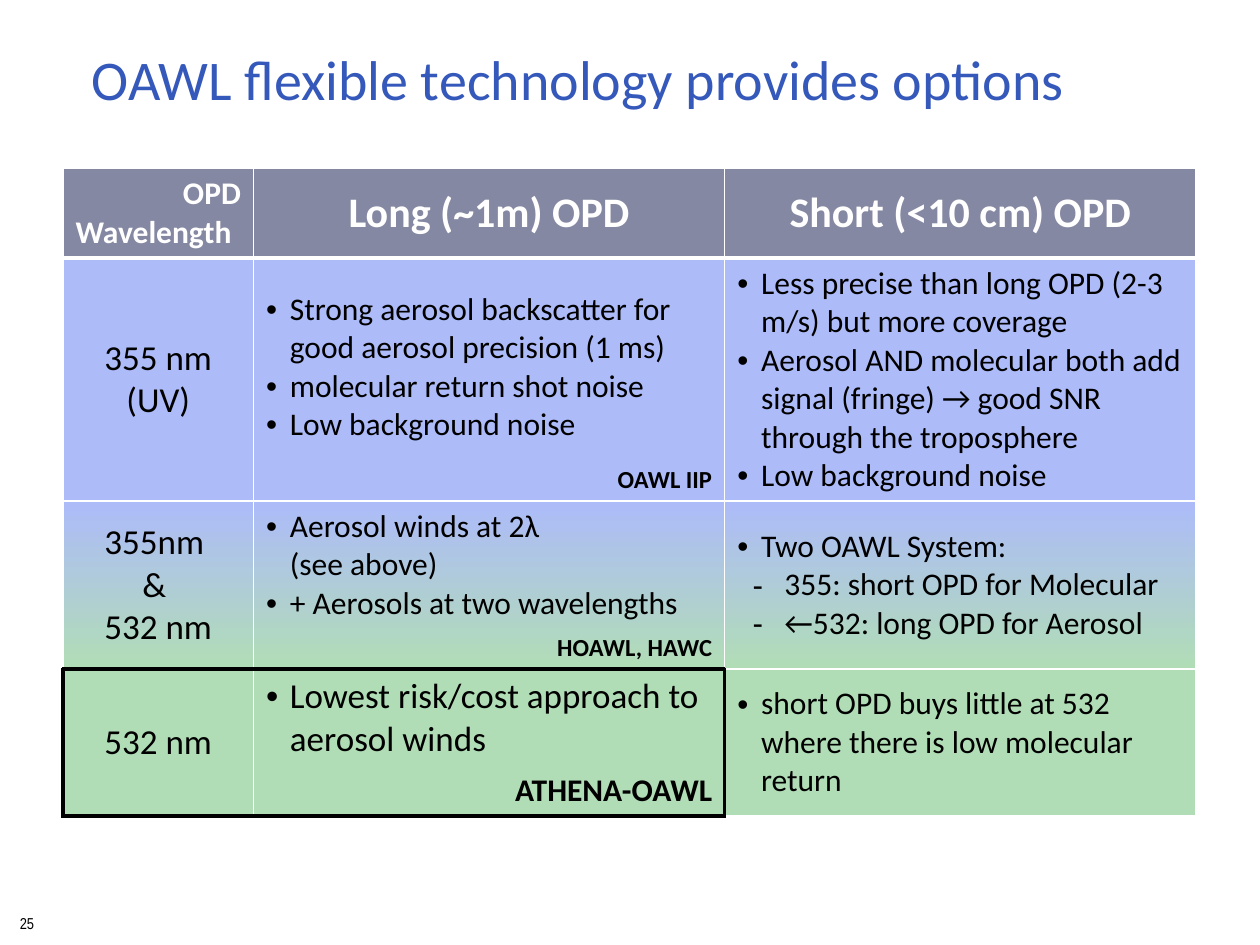
import pptx
import pptx.dml.color
import pptx.enum.text
import pptx.oxml.ns
import pptx.util
from dataclasses import dataclass
from lxml import etree

Cm = pptx.util.Cm
Pt = pptx.util.Pt
RGBColor = pptx.dml.color.RGBColor
Align = pptx.enum.text.PP_ALIGN
Anchor = pptx.enum.text.MSO_ANCHOR
qn = pptx.oxml.ns.qn

TITLE_BLUE = RGBColor(0x35, 0x58, 0xBB)
HEADER_GREY = RGBColor(0x85, 0x88, 0xA2)
UV_BLUE = RGBColor(0xAD, 0xBB, 0xF9)
GREEN = RGBColor(0xB1, 0xDD, 0xB6)
WHITE = RGBColor(0xFF, 0xFF, 0xFF)
BLACK = RGBColor(0, 0, 0)

COLUMN_WIDTHS = (3.84, 9.5, 9.5)
ROW_HEIGHTS = (1.81, 4.9, 3.39, 2.96)
ROW_FILLS = ((HEADER_GREY,), (UV_BLUE,), (UV_BLUE, GREEN), (GREEN,))


@dataclass
class Line:
    text: str
    size: float = 18
    bold: bool = False
    align: Align = Align.LEFT
    bullet: str = ""
    before: float = 0


def header(text, size=24, align=Align.CENTER):
    return Line(text, size, True, align)


def wavelength(text):
    return Line(text, 20, align=Align.CENTER)


def point(text, size=18):
    return Line(text, size, bullet="•")


def subpoint(text):
    return Line(text, bullet="-")


def mission(text, before, size=14):
    return Line(text, size, True, Align.RIGHT, before=before)


ROWS = (
    (
        (header("OPD", 18, Align.RIGHT), header("Wavelength", 18, Align.LEFT)),
        (header("Long (~1m) OPD"),),
        (header("Short (<10 cm) OPD"),),
    ),
    (
        (wavelength("355 nm (UV)"),),
        (
            point("Strong aerosol backscatter for good aerosol precision (1 ms)"),
            point("molecular return shot noise"),
            point("Low background noise"),
            mission("OAWL IIP", 12),
        ),
        (
            point("Less precise than long OPD (2-3 m/s) but more coverage"),
            point("Aerosol AND molecular both add signal (fringe) → good SNR "
                  "through the troposphere"),
            point("Low background noise"),
        ),
    ),
    (
        (wavelength("355nm \n& \n532 nm"),),
        (
            point("Aerosol winds at 2λ \n(see above)"),
            point("+ Aerosols at two wavelengths"),
            mission("HOAWL, HAWC", 6),
        ),
        (
            point("Two OAWL System:"),
            subpoint("355: short OPD for Molecular"),
            subpoint("←532: long OPD for Aerosol"),
        ),
    ),
    (
        (wavelength("532 nm"),),
        (point("Lowest risk/cost approach to aerosol winds", 20),
         mission("ATHENA-OAWL", 6, 18)),
        (point("short OPD buys little at 532 where there is low molecular return"),),
    ),
)


def set_bullet(paragraph, mark):
    margin, hang = (0.48, 0.48) if mark == "•" else (0.95, 0.64)
    properties = paragraph._p.get_or_add_pPr()
    properties.set("marL", str(Cm(margin)))
    properties.set("indent", str(-Cm(hang)))
    bullet_font = etree.SubElement(properties, qn("a:buFont"))
    bullet_font.set("typeface", "Arial")
    etree.SubElement(properties, qn("a:buChar")).set("char", mark)
    if mark == "-":
        paragraph.level = 1


def write_line(paragraph, line, color, font="Calibri"):
    if line.bullet:
        set_bullet(paragraph, line.bullet)
    paragraph.alignment = line.align
    if line.before:
        paragraph.space_before = Pt(line.before)
    for index, part in enumerate(line.text.split("\n")):
        if index:
            paragraph.add_line_break()
        run = paragraph.add_run()
        run.text = part
        run.font.name = font
        run.font.size = Pt(line.size)
        run.font.bold = line.bold
        run.font.color.rgb = color


def add_label(slide, line, box, color, font="Calibri", inset=0):
    frame = slide.shapes.add_textbox(*(Cm(value) for value in box)).text_frame
    frame.word_wrap = True
    frame.vertical_anchor = Anchor.MIDDLE
    frame.margin_left = frame.margin_right = Cm(inset)
    frame.margin_top = frame.margin_bottom = Cm(inset / 2)
    write_line(frame.paragraphs[0], line, color, font)


def fill_cell(cell, colors):
    if len(colors) == 1:
        cell.fill.solid()
        cell.fill.fore_color.rgb = colors[0]
        return
    cell.fill.gradient()
    cell.fill.gradient_angle = 270
    for stop, color in zip(cell.fill.gradient_stops, colors):
        stop.color.rgb = color


def cell_borders(row, column):
    borders = dict.fromkeys("LRTB", (WHITE, 1))
    frame = (BLACK, 2.25)
    if row == 0:
        borders["B"] = (WHITE, 3)
    if row == 1:
        borders["T"] = (WHITE, 3)
    if row == 2 and column < 2:
        borders["B"] = frame
    if row == 3:
        if column < 2:
            borders["T"] = borders["B"] = frame
        borders["R" if column == 1 else "L"] = frame
    return borders


def draw_borders(cell, borders):
    properties = cell._tc.get_or_add_tcPr()
    for index, (side, (color, width)) in enumerate(borders.items()):
        edge = etree.Element(qn(f"a:ln{side}"), w=str(Pt(width)))
        solid = etree.SubElement(edge, qn("a:solidFill"))
        etree.SubElement(solid, qn("a:srgbClr")).set("val", str(color))
        properties.insert(index, edge)


def add_options_table(slide):
    table = slide.shapes.add_table(
        len(ROWS), len(COLUMN_WIDTHS), Cm(1.27), Cm(3.39),
        Cm(sum(COLUMN_WIDTHS)), Cm(sum(ROW_HEIGHTS))).table
    for column, width in zip(table.columns, COLUMN_WIDTHS):
        column.width = Cm(width)
    for r, (cells, height, colors) in enumerate(zip(ROWS, ROW_HEIGHTS, ROW_FILLS)):
        table.rows[r].height = Cm(height)
        for c, lines in enumerate(cells):
            cell = table.cell(r, c)
            cell.vertical_anchor = Anchor.BOTTOM if (r, c) == (1, 1) else Anchor.MIDDLE
            fill_cell(cell, colors)
            draw_borders(cell, cell_borders(r, c))
            for index, line in enumerate(lines):
                frame = cell.text_frame
                paragraph = frame.add_paragraph() if index else frame.paragraphs[0]
                write_line(paragraph, line, BLACK if r else WHITE)


def main():
    deck = pptx.Presentation()
    deck.slide_width, deck.slide_height = Cm(25.4), Cm(19.05)
    slide = deck.slides.add_slide(deck.slide_layouts[6])
    add_label(slide, Line("25", 9, align=Align.CENTER), (0.05, 18.34, 0.99, 0.53),
              BLACK, "Arial Narrow")
    add_label(slide, Line("OAWL flexible technology provides options", 32),
              (1.6, 0.81, 20.57, 1.55), TITLE_BLUE, inset=0.25)
    add_options_table(slide)
    deck.save("out.pptx")


if __name__ == "__main__":
    main()
